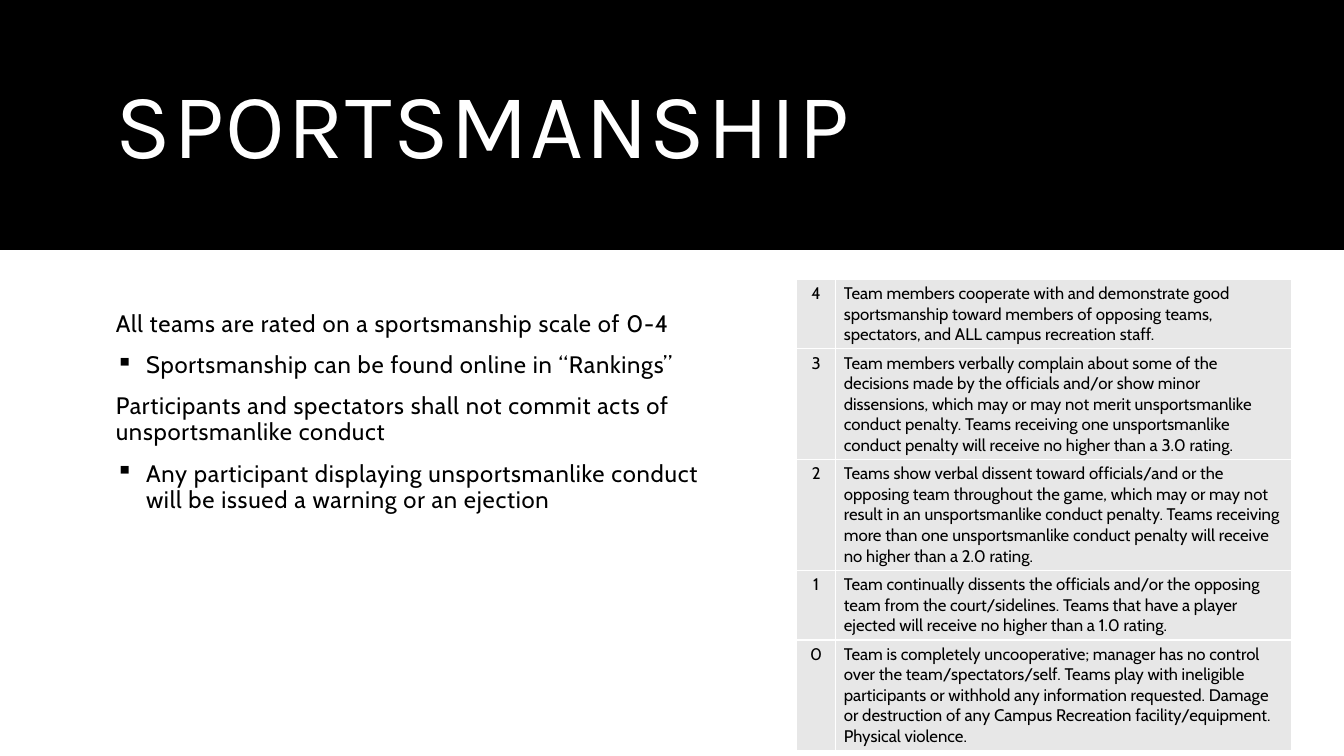
from lxml import etree
from pptx import Presentation
from pptx.dml.color import RGBColor
from pptx.enum.shapes import MSO_SHAPE
from pptx.enum.text import MSO_ANCHOR, PP_ALIGN
from pptx.oxml.ns import qn
from pptx.util import Inches, Pt

RECTANGLE = MSO_SHAPE.RECTANGLE
MIDDLE = MSO_ANCHOR.MIDDLE
CENTER = PP_ALIGN.CENTER
LEFT = PP_ALIGN.LEFT

BLACK, WHITE, GRAY = "000000", "FFFFFF", "E7E7E7"
SLIDE_WIDTH, SLIDE_HEIGHT = 13.33, 7.5
BULLET_INDENT = 0.3

RULES = [
    (False, "All teams are rated on a sportsmanship scale of 0-4"),
    (True, "Sportsmanship can be found online in “Rankings”"),
    (False, "Participants and spectators shall not commit acts of "
            "unsportsmanlike conduct"),
    (True, "Any participant displaying unsportsmanlike conduct will be "
           "issued a warning or an ejection"),
]

RATINGS = [
    ("4", 0.69, "Team members cooperate with and demonstrate good sportsmanship "
                "toward members of opposing teams, spectators, and ALL campus "
                "recreation staff."),
    ("3", 1.1, "Team members verbally complain about some of the decisions made "
               "by the officials and/or show minor dissensions, which may or may "
               "not merit unsportsmanlike conduct penalty. Teams receiving one "
               "unsportsmanlike conduct penalty will receive no higher than a "
               "3.0 rating."),
    ("2", 1.1, "Teams show verbal dissent toward officials/and or the opposing "
               "team throughout the game, which may or may not result in an "
               "unsportsmanlike conduct penalty. Teams receiving more than one "
               "unsportsmanlike conduct penalty will receive no higher than a "
               "2.0 rating."),
    ("1", 0.69, "Team continually dissents the officials and/or the opposing team "
                "from the court/sidelines. Teams that have a player ejected will "
                "receive no higher than a 1.0 rating."),
    ("0", 1.1, "Team is completely uncooperative; manager has no control over the "
               "team/spectators/self. Teams play with ineligible participants or "
               "withhold any information requested. Damage or destruction of any "
               "Campus Recreation facility/equipment. Physical violence."),
]


def color(value):
    return RGBColor.from_string(value)


def add_span(para, text, size, font, fill, spacing=0):
    span = para.add_run()
    span.text = text
    span.font.size = Pt(size)
    span.font.name = font
    span.font.color.rgb = color(fill)
    if spacing:
        span._r.get_or_add_rPr().set("spc", str(round(spacing * 100)))


def add_text_frame(page, left, top, width, height):
    box = page.shapes.add_textbox(
        Inches(left), Inches(top), Inches(width), Inches(height))
    box.text_frame.word_wrap = True
    return box.text_frame


def set_bullet(para, indent):
    properties = para._p.get_or_add_pPr()
    properties.set("marL", str(Inches(indent)))
    properties.set("indent", str(-Inches(indent)))
    etree.SubElement(properties, qn("a:buChar")).set("char", "▪")


def set_borders(cell, fill, width):
    properties = cell._tc.get_or_add_tcPr()
    for position, side in enumerate(("a:lnL", "a:lnR", "a:lnT", "a:lnB")):
        line = etree.Element(qn(side), w=str(Pt(width)))
        solid = etree.SubElement(line, qn("a:solidFill"))
        etree.SubElement(solid, qn("a:srgbClr")).set("val", fill)
        properties.insert(position, line)


def add_header(page, left, top, width, height):
    band = page.shapes.add_shape(
        RECTANGLE, Inches(left), Inches(top), Inches(width), Inches(height))
    band.shadow.inherit = False
    band.fill.solid()
    band.fill.fore_color.rgb = color(BLACK)
    band.line.fill.background()
    frame = add_text_frame(page, left + 1.05, top + 0.35, width - 2.1, height - 0.62)
    frame.vertical_anchor = MIDDLE
    para = frame.paragraphs[0]
    para.line_spacing = 0.9
    add_span(para, "SPORTSMANSHIP", 66, "Karla", WHITE, 1.2)


def add_rules(page, left, top, width, height):
    frame = add_text_frame(page, left, top, width, height)
    for index, (bulleted, text) in enumerate(RULES):
        para = frame.add_paragraph() if index else frame.paragraphs[0]
        para.line_spacing = 0.91
        para.space_before = para.space_after = Pt(4 if bulleted else 7)
        if bulleted:
            para.level = 1
            set_bullet(para, BULLET_INDENT)
        add_span(para, text, 17, "Cabin", BLACK, 0.5)


def fill_cell(cell, text, alignment):
    cell.fill.solid()
    cell.fill.fore_color.rgb = color(GRAY)
    cell.margin_left = cell.margin_right = Inches(0.08)
    cell.margin_top = cell.margin_bottom = Inches(0.04)
    set_borders(cell, WHITE, 1)
    para = cell.text_frame.paragraphs[0]
    para.alignment = alignment
    add_span(para, text, 12, "Cabin", BLACK)


def add_ratings(page, left, top, width, score_width):
    height = sum(row_height for _, row_height, _ in RATINGS)
    table = page.shapes.add_table(
        len(RATINGS), 2, Inches(left), Inches(top), Inches(width), Inches(height)).table
    table.first_row = False
    table.horz_banding = False
    table.columns[0].width = Inches(score_width)
    table.columns[1].width = Inches(width - score_width)
    for index, (score, row_height, description) in enumerate(RATINGS):
        table.rows[index].height = Inches(row_height)
        fill_cell(table.cell(index, 0), score, CENTER)
        fill_cell(table.cell(index, 1), description, LEFT)


def main():
    deck = Presentation()
    deck.slide_width = Inches(SLIDE_WIDTH)
    deck.slide_height = Inches(SLIDE_HEIGHT)
    page = deck.slides.add_slide(deck.slide_layouts[6])
    page.background.fill.solid()
    page.background.fill.fore_color.rgb = color(WHITE)
    add_header(page, 0, 0, SLIDE_WIDTH, 2.48)
    add_rules(page, 1.05, 3.04, 6.32, 3.75)
    add_ratings(page, 7.9, 2.77, 4.91, 0.39)
    deck.save("out.pptx")


if __name__ == "__main__":
    main()
